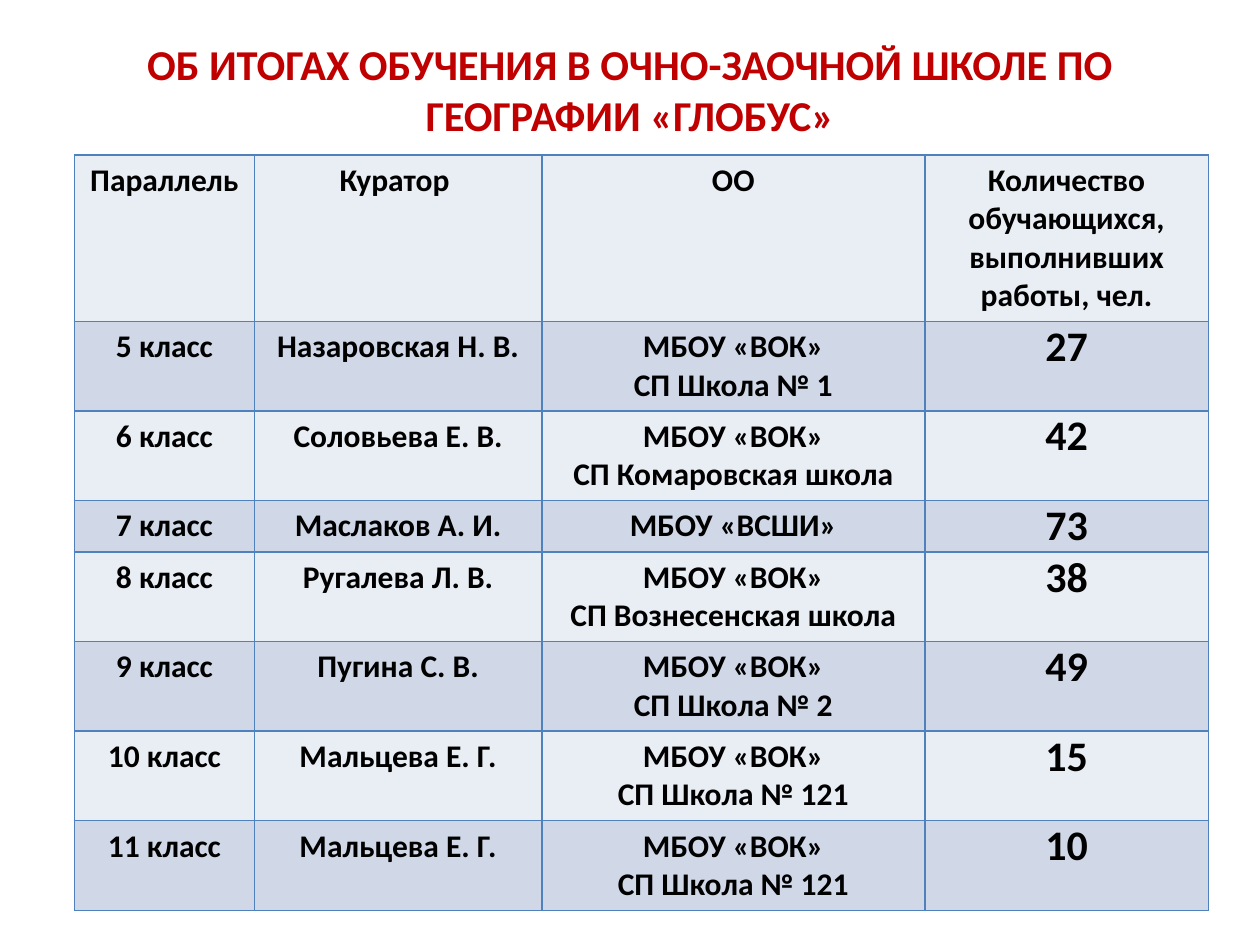
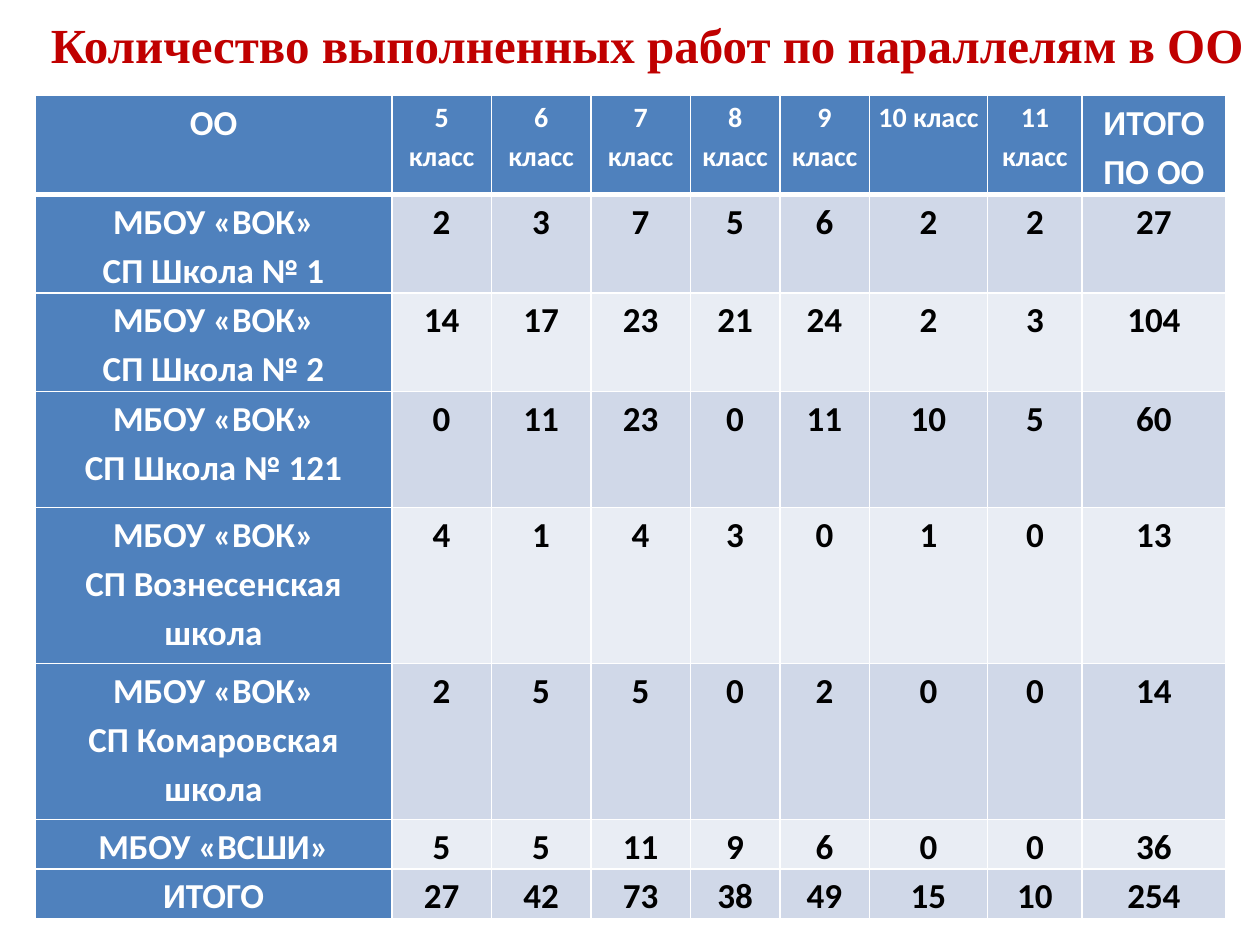
from lxml.etree import SubElement
from pptx import Presentation
from pptx.dml.color import RGBColor
from pptx.enum.text import MSO_ANCHOR, PP_ALIGN
from pptx.oxml.ns import qn
from pptx.util import Inches, Pt

COLORS = {
    "title": "C00000",
    "accent": "4F81BD",
    "dark_band": "D0D8E8",
    "light_band": "E9EDF4",
    "white": "FFFFFF",
    "black": "000000",
}
BANDS = ["light_band", "dark_band"]


def add_text(tf, text, font, size, color, spacing=None):
    for i, line in enumerate(text.split("\n")):
        p = tf.paragraphs[0] if i == 0 else tf.add_paragraph()
        p.alignment = PP_ALIGN.CENTER
        if spacing:
            p.line_spacing = spacing
        r = p.add_run()
        r.text = line
        r.font.name = font
        r.font.size = Pt(size)
        r.font.bold = True
        r.font.color.rgb = RGBColor.from_string(COLORS[color])


def style_cell(cell, fill, border, top=1, bottom=1, tight=False):
    if tight:
        cell.margin_left = cell.margin_right = Inches(0.07)
        cell.margin_top = cell.margin_bottom = 0
    tcPr = cell._tc.get_or_add_tcPr()
    for side, width in zip("LRTB", (1, 1, top, bottom)):
        ln = SubElement(tcPr, qn(f"a:ln{side}"), w=str(Pt(width)))
        solid = SubElement(ln, qn("a:solidFill"))
        SubElement(solid, qn("a:srgbClr"), val=COLORS[border])
    cell.fill.solid()
    cell.fill.fore_color.rgb = RGBColor.from_string(COLORS[fill])


curators = [
    ["Параллель", "Куратор ", "ОО", "Количество обучающихся, выполнивших работы, чел."],
    ["5 класс", "Назаровская Н. В.", "МБОУ «ВОК»\nСП Школа № 1", "27"],
    ["6 класс", "Соловьева Е. В.", "МБОУ «ВОК»\nСП Комаровская школа", "42"],
    ["7 класс", "Маслаков А. И.", "МБОУ «ВСШИ»", "73"],
    ["8 класс", "Ругалева Л. В.", "МБОУ «ВОК»\nСП Вознесенская школа", "38"],
    ["9 класс", "Пугина С. В.", "МБОУ «ВОК»\nСП Школа № 2", "49"],
    ["10 класс", "Мальцева Е. Г.", "МБОУ «ВОК»\nСП Школа № 121", "15"],
    ["11 класс", "Мальцева Е. Г.", "МБОУ «ВОК»\nСП Школа № 121", "10"],
]

works = {
    "МБОУ «ВОК»\nСП Школа № 1": [2, 3, 7, 5, 6, 2, 2],
    "МБОУ «ВОК»\nСП Школа № 2": [14, 17, 23, 21, 24, 2, 3],
    "МБОУ «ВОК»\nСП Школа № 121": [0, 11, 23, 0, 11, 10, 5],
    "МБОУ «ВОК»\nСП Вознесенская школа": [4, 1, 4, 3, 0, 1, 0],
    "МБОУ «ВОК»\nСП Комаровская школа": [2, 5, 5, 0, 2, 0, 0],
    "МБОУ «ВСШИ»": [5, 5, 11, 9, 6, 0, 0],
}
works["ИТОГО"] = [sum(grade) for grade in zip(*works.values())]
totals = [["ОО"] + [f"{grade} класс" for grade in range(5, 12)] + ["ИТОГО ПО ОО"]]
totals += [[school, *counts, sum(counts)] for school, counts in works.items()]

slides = [
    {
        "title": "ОБ ИТОГАХ ОБУЧЕНИЯ В ОЧНО-ЗАОЧНОЙ ШКОЛЕ ПО ГЕОГРАФИИ «ГЛОБУС»",
        "title_box": (0.5, 0.32, 9, 0.77),
        "title_font": ("Calibri", 24.3),
        "origin": (0.59, 1.23),
        "cols": [1.43, 2.28, 3.04, 2.25],
        "rows": [1.32, 0.71, 0.71, 0.41, 0.71, 0.71, 0.71, 0.71],
        "data": curators,
    },
    {
        "title": "Количество выполненных работ по параллелям в ОО",
        "title_box": (0.29, 0, 9.69, 0.69),
        "title_font": ("Times New Roman", 28),
        "origin": (0.28, 0.76),
        "cols": [2.83, 0.79, 0.79, 0.79, 0.71, 0.71, 0.94, 0.75, 1.14],
        "rows": [0.77, 0.78, 0.78, 0.92, 1.24, 1.24, 0.39, 0.39],
        "data": totals,
    },
]

prs = Presentation()
prs.slide_width = Inches(10)
prs.slide_height = Inches(7.5)

tables = []
for info in slides:
    s = prs.slides.add_slide(prs.slide_layouts[5])
    title = s.shapes.title
    title.left, title.top, title.width, title.height = map(Inches, info["title_box"])
    tf = title.text_frame
    tf.word_wrap = True
    tf.vertical_anchor = MSO_ANCHOR.MIDDLE
    add_text(tf, info["title"], *info["title_font"], "title")

    cols, rows = info["cols"], info["rows"]
    size = (sum(cols), sum(rows))
    table = s.shapes.add_table(
        len(rows), len(cols), *map(Inches, info["origin"] + size)
    ).table
    table.horz_banding = False
    table.first_row = False
    for col, width in zip(table.columns, cols):
        col.width = Inches(width)
    for row, height in zip(table.rows, rows):
        row.height = Inches(height)
    tables.append(table)

for i, row in enumerate(curators):
    for j, text in enumerate(row):
        cell = tables[0].cell(i, j)
        is_count = i > 0 and j == 3
        style_cell(cell, BANDS[i % 2], "accent", tight=is_count)
        add_text(cell.text_frame, text, "Calibri", 24 if is_count else 18, "black")

for i, row in enumerate(totals):
    for j, value in enumerate(row):
        cell = tables[1].cell(i, j)
        is_head = i == 0 or j == 0
        style_cell(
            cell,
            "accent" if is_head else BANDS[i % 2],
            "white",
            top=3 if i == 1 else 1,
            bottom=3 if i == 0 else 1,
            tight=True,
        )
        text_size = 16 if i == 0 and 0 < j < 8 else 20
        color = "white" if is_head else "black"
        add_text(cell.text_frame, str(value), "Calibri", text_size, color, 1.15)

prs.save("out.pptx")
